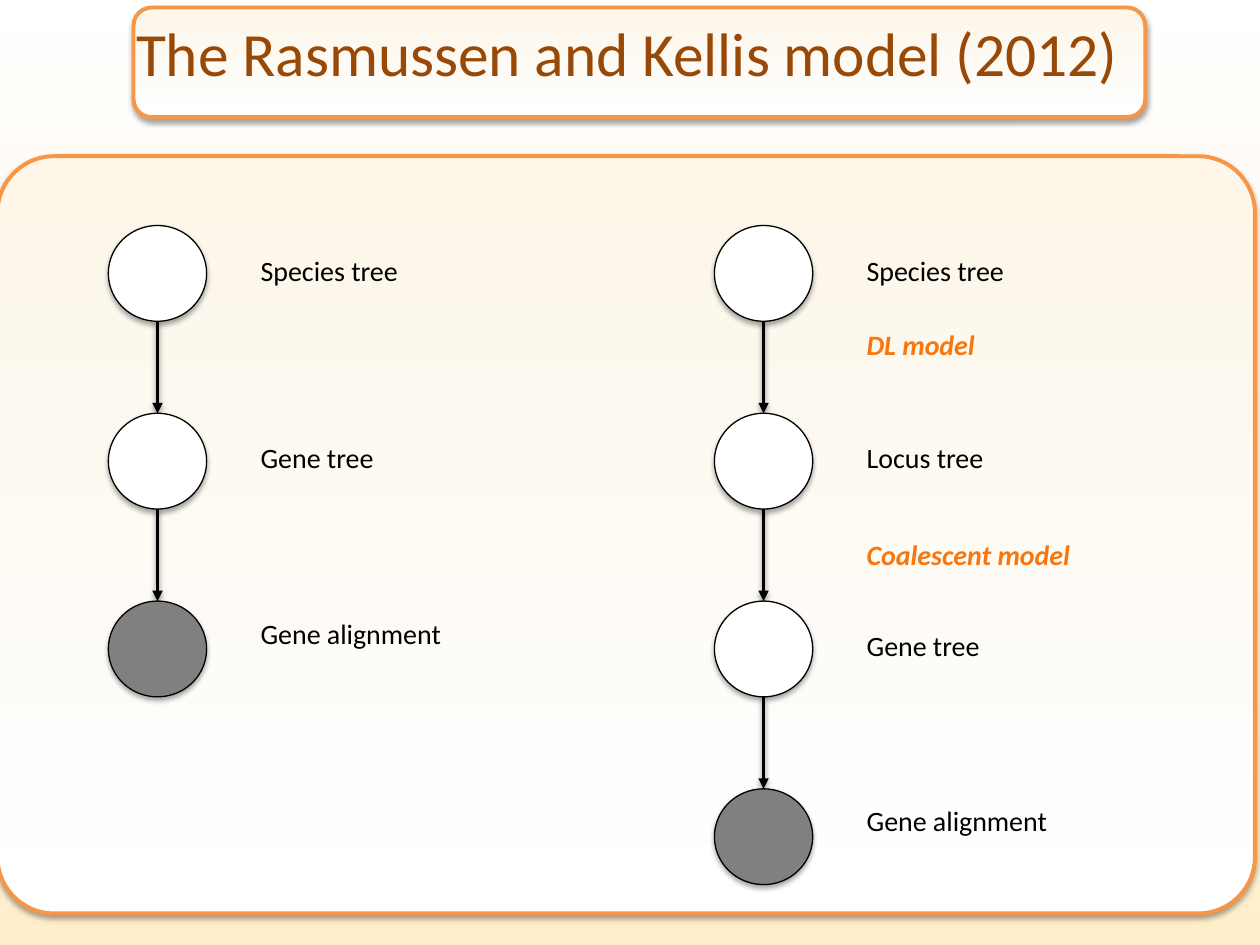
from dataclasses import dataclass

import pptx
import pptx.dml.color
import pptx.enum.dml
import pptx.enum.shapes
import pptx.enum.text
import pptx.oxml
import pptx.oxml.ns
import pptx.util

Pt = pptx.util.Pt
SHAPE = pptx.enum.shapes.MSO_SHAPE
AUTO_SIZE = pptx.enum.text.MSO_AUTO_SIZE


@dataclass(frozen=True)
class Theme:
    font: str = "Calibri"
    title_size: float = 35.1
    label_size: float = 16
    frame_line: float = 2.25
    node_line: float = 0.75
    arrow_line: float = 2
    title: str = "984807"
    ink: str = "000000"
    accent: str = "F9760E"
    border: str = "F79646"
    white: str = "FFFFFF"
    cream: str = "FDF6E9"
    backdrop: str = "FFEECA"
    observed: str = "808080"


@dataclass(frozen=True)
class Box:
    """Left, top, width and height in percent of the slide's size."""
    x: float
    y: float
    w: float
    h: float

    def emu(self) -> tuple[int, int, int, int]:
        return across(self.x), down(self.y), across(self.w), down(self.h)


@dataclass(frozen=True)
class Chain:
    """A column of nodes; the last one is observed data."""
    x: float
    labels: tuple[str, ...]


THEME = Theme()
WIDTH, HEIGHT = pptx.util.Inches(10), pptx.util.Inches(7.5)

BANNER = Box(10.6, 0.8, 80.3, 11.6)
TITLE = Box(8.6, -1.87, 82.3, 14.8)
PANEL = Box(-0.2, 16.53, 99.8, 80.13)

FIRST_ROW, ROW_PITCH = 23.87, 19.87
NODE_W, NODE_H = 7.8, 10.13
LABEL_SHIFT, LABEL_W, LABEL_H = 11.1, 27.5, 4.93
LABEL_DROP, OBSERVED_DROP = 2.27, 0.93
MODEL_W = 23.1

CHAINS = (
    Chain(8.6, ("Species tree", "Gene tree", "Gene alignment")),
    Chain(56.7, ("Species tree", "Locus tree", "Gene tree", "Gene alignment")),
)
MODELS = (("DL model", 34), ("Coalescent model", 56.27))


def across(percent: float) -> int:
    return round(WIDTH * percent / 100)


def down(percent: float) -> int:
    return round(HEIGHT * percent / 100)


def rgb(color: str) -> pptx.dml.color.RGBColor:
    return pptx.dml.color.RGBColor.from_string(color)


def fill_gradient(fill, start: str, end: str, angle: float) -> None:
    """Blend two colours; the angle runs counter-clockwise."""
    fill.gradient()
    fill.gradient_angle = angle
    for stop, color in zip(fill.gradient_stops, (start, end)):
        stop.color.rgb = rgb(color)


def add_shadow(s, opacity: int, distance: float) -> None:
    ns = pptx.oxml.ns.nsdecls("a")
    s.element.spPr.append(pptx.oxml.parse_xml(
        f'<a:effectLst {ns}><a:outerShdw blurRad="{Pt(3.1)}" dist="{Pt(distance)}"'
        f' dir="5400000" rotWithShape="0"><a:srgbClr val="{THEME.ink}">'
        f'<a:alpha val="{opacity * 1000}"/></a:srgbClr></a:outerShdw></a:effectLst>'))


def set_line(line, color: str, width: float) -> None:
    line.color.rgb = rgb(color)
    line.width = Pt(width)


def add_frame(shapes, box: Box):
    s = shapes.add_shape(SHAPE.ROUNDED_RECTANGLE, *box.emu())
    fill_gradient(s.fill, THEME.white, THEME.cream, 90)
    set_line(s.line, THEME.border, THEME.frame_line)
    add_shadow(s, 35, 1.8)
    return s


def add_node(shapes, box: Box, color: str) -> None:
    s = shapes.add_shape(SHAPE.OVAL, *box.emu())
    s.fill.solid()
    s.fill.fore_color.rgb = rgb(color)
    set_line(s.line, THEME.ink, THEME.node_line)
    add_shadow(s, 35, 1.8)


def add_arrow(shapes, x: float, top: float, bottom: float) -> None:
    s = shapes.add_connector(pptx.enum.shapes.MSO_CONNECTOR.STRAIGHT,
                             across(x), down(top), across(x), down(bottom))
    set_line(s.line, THEME.ink, THEME.arrow_line)
    ns = pptx.oxml.ns.nsdecls("a")
    s.line._get_or_add_ln().append(
        pptx.oxml.parse_xml(f'<a:tailEnd {ns} type="triangle"/>'))
    add_shadow(s, 38, 1.6)


def set_font(p, size: float, color: str) -> None:
    p.font.name = THEME.font
    p.font.size = Pt(size)
    p.font.color.rgb = rgb(color)


def add_label(shapes, text: str, box: Box, model: bool = False) -> None:
    tf = shapes.add_textbox(*box.emu()).text_frame
    tf.word_wrap = True
    tf.auto_size = AUTO_SIZE.SHAPE_TO_FIT_TEXT
    p = tf.paragraphs[0]
    p.text = text
    set_font(p, THEME.label_size, THEME.accent if model else THEME.ink)
    if model:
        p.font.bold = p.font.italic = True


def add_chain(shapes, chain: Chain) -> None:
    last = len(chain.labels) - 1
    for row, text in enumerate(chain.labels):
        y = FIRST_ROW + row * ROW_PITCH
        observed = row == last
        add_node(shapes, Box(chain.x, y, NODE_W, NODE_H),
                 THEME.observed if observed else THEME.white)
        if not observed:
            add_arrow(shapes, chain.x + NODE_W / 2, y + NODE_H, y + ROW_PITCH)
        drop = OBSERVED_DROP if observed else LABEL_DROP
        add_label(shapes, text, Box(chain.x + LABEL_SHIFT, y + drop, LABEL_W, LABEL_H))


def place_title(s, text: str) -> None:
    s.left, s.top, s.width, s.height = TITLE.emu()
    tf = s.text_frame
    tf.word_wrap = True
    tf.auto_size = AUTO_SIZE.NONE
    tf.vertical_anchor = pptx.enum.text.MSO_ANCHOR.MIDDLE
    p = tf.paragraphs[0]
    p.text = text
    p.alignment = pptx.enum.text.PP_ALIGN.CENTER
    set_font(p, THEME.title_size, THEME.title)


def main() -> None:
    prs = pptx.Presentation()
    prs.slide_width, prs.slide_height = WIDTH, HEIGHT
    slide = prs.slides.add_slide(prs.slide_layouts.get_by_name("Title Only"))
    fill_gradient(slide.background.fill, THEME.white, THEME.backdrop, 270)

    banner = add_frame(slide.shapes, BANNER)
    title = slide.shapes.title
    place_title(title, "The Rasmussen and Kellis model (2012)")
    banner.element.addnext(title.element)
    panel = add_frame(slide.shapes, PANEL)
    panel.adjustments[0] = 0.075

    for chain in CHAINS:
        add_chain(slide.shapes.add_group_shape().shapes, chain)
    models = slide.shapes.add_group_shape().shapes
    for text, y in MODELS:
        add_label(models, text, Box(CHAINS[1].x + LABEL_SHIFT, y, MODEL_W, LABEL_H), True)

    prs.save("out.pptx")


if __name__ == "__main__":
    main()
